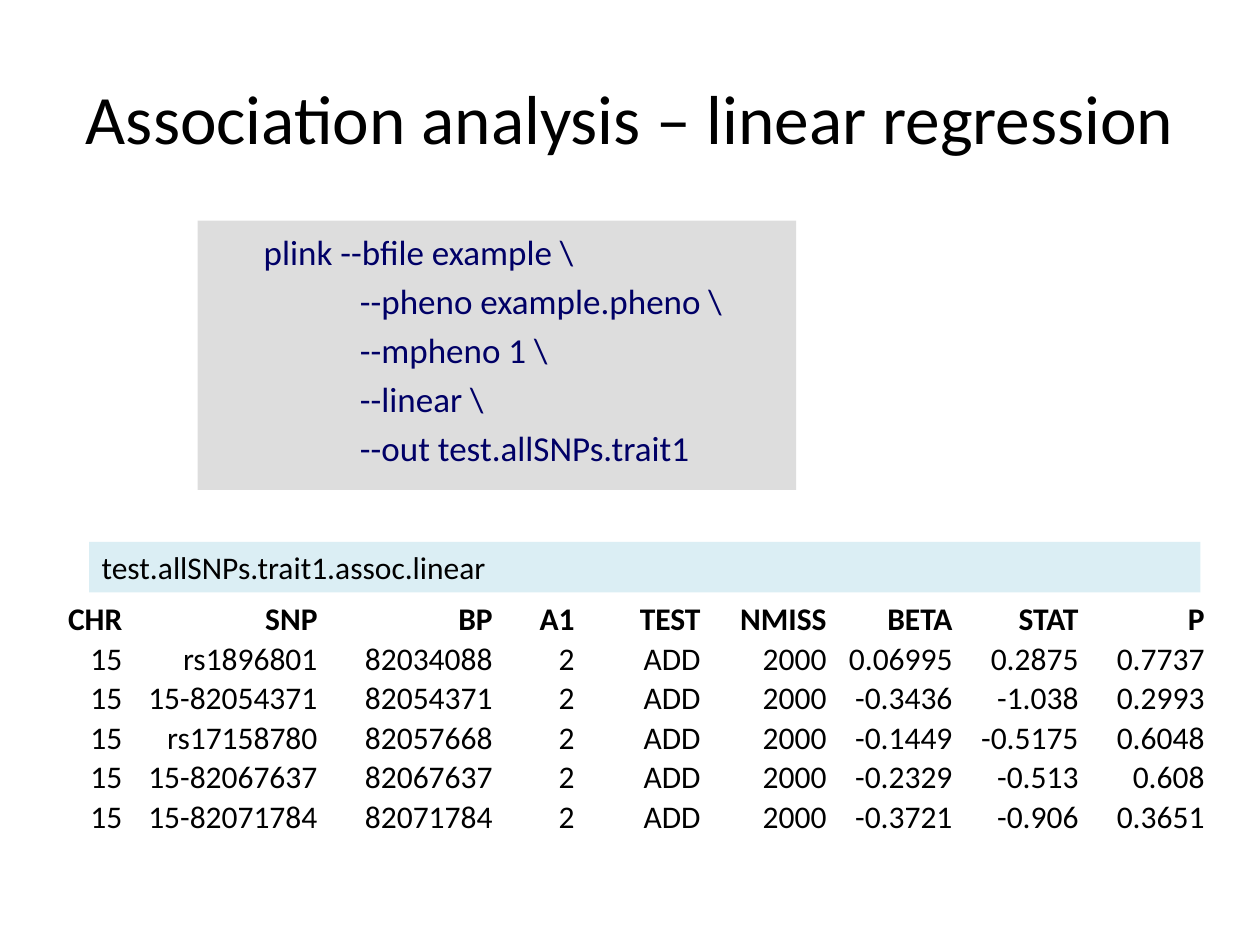
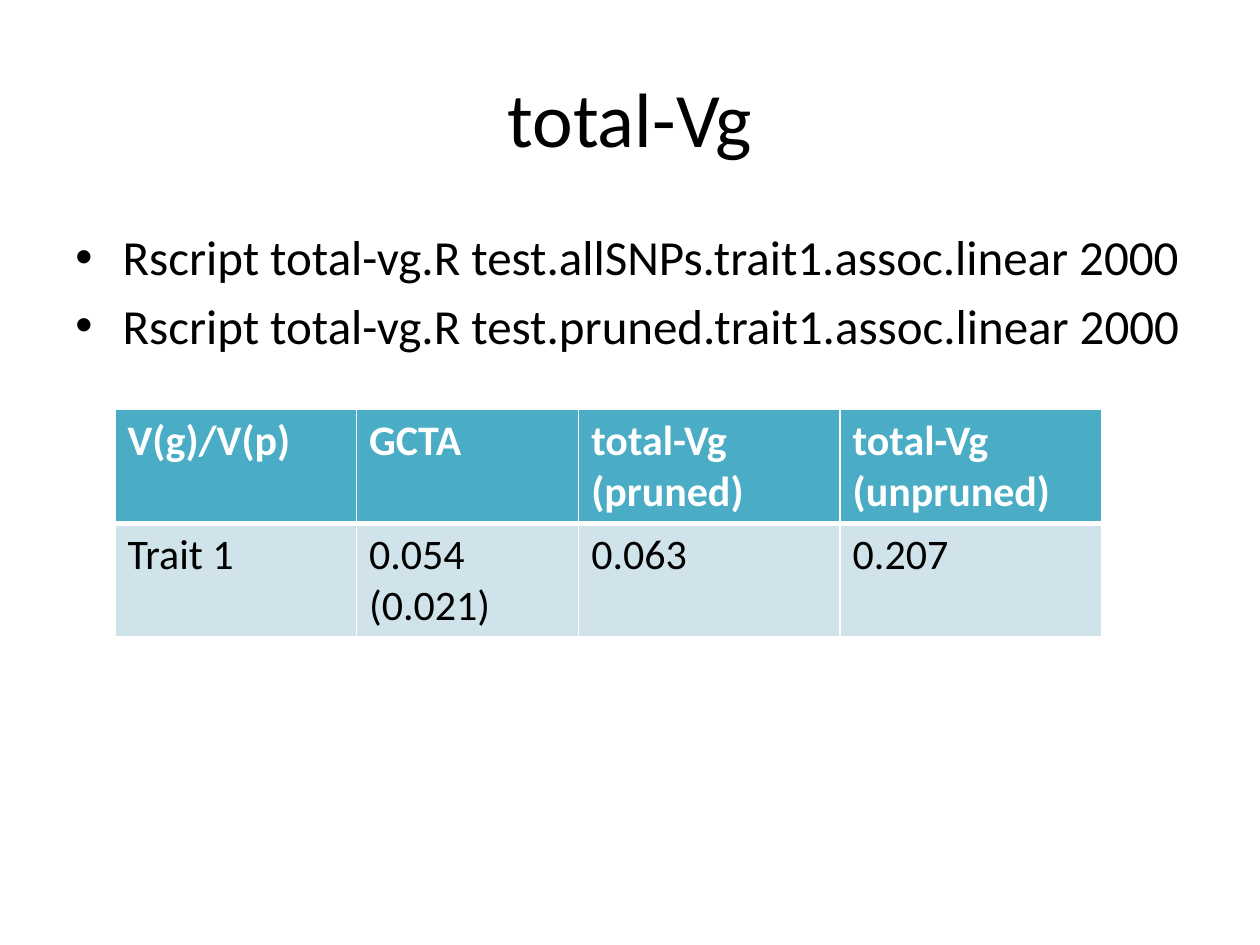
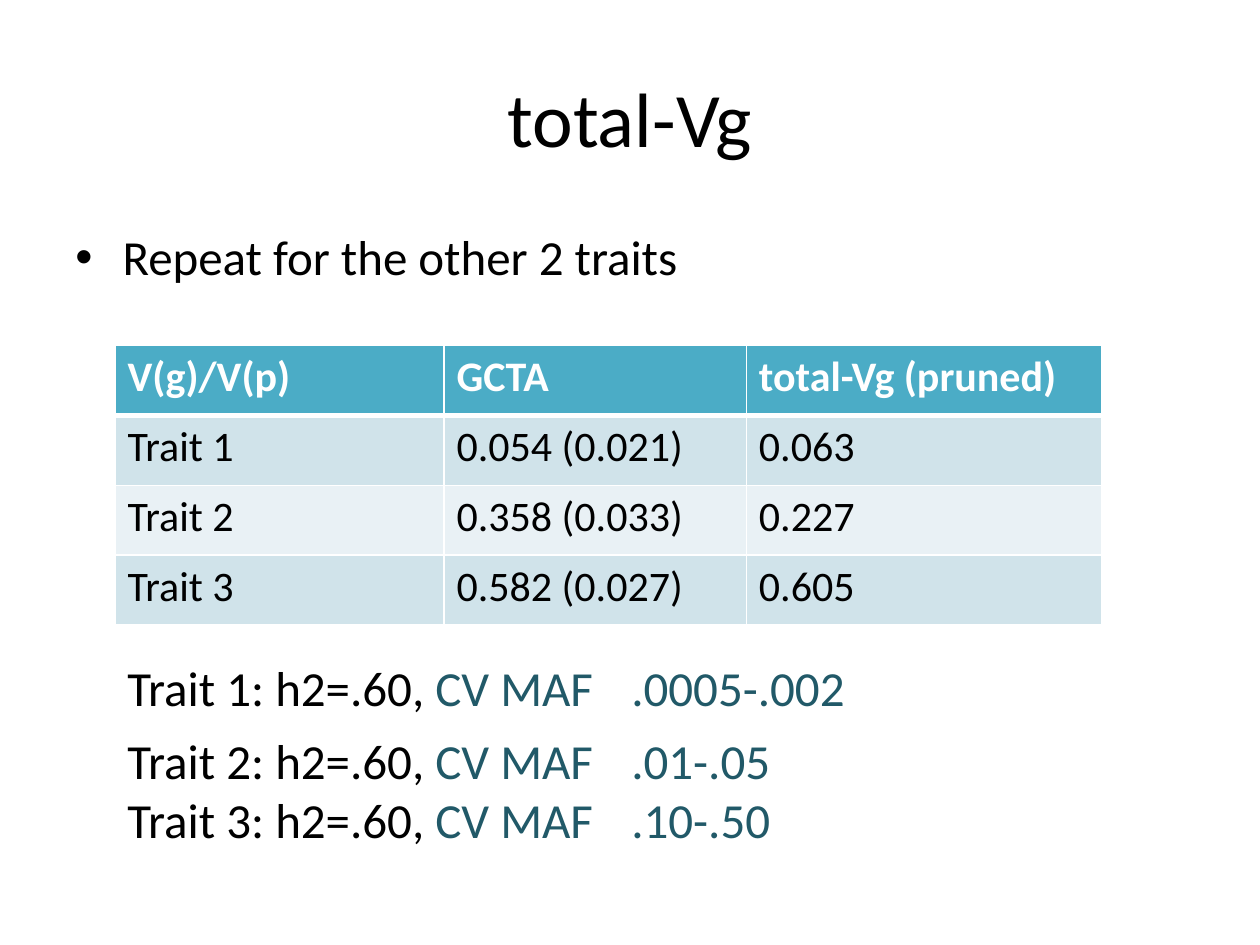
from dataclasses import dataclass

from lxml.etree import SubElement
from pptx import Presentation
from pptx.dml.color import RGBColor as Rgb
from pptx.enum.shapes import MSO_SHAPE as Preset
from pptx.enum.text import MSO_ANCHOR as Anchor, PP_ALIGN as Align
from pptx.oxml.ns import qn
from pptx.util import Pt


@dataclass(frozen=True)
class Theme:
    font: str = "Calibri"
    black: str = "000000"
    white: str = "FFFFFF"
    code: str = "000066"
    code_panel: str = "DDDDDD"
    file_band: str = "DBEEF4"
    header: str = "4BACC6"
    bands: tuple = ("D0E3EA", "E9F1F5")
    accent: str = "215968"
    title_size: float = 44
    long_title_size: float = 39.6
    body_size: float = 28
    table_size: float = 24
    code_size: float = 20
    result_size: float = 18


THEME = Theme()

# Content: association analysis
ASSOCIATION_TITLE = "Association analysis – linear regression"
COMMAND = [
    "plink --bfile example \\",
    "--pheno example.pheno \\",
    "--mpheno 1 \\",
    "--linear \\",
    "--out test.allSNPs.trait1",
]
RESULT_FILE = "test.allSNPs.trait1.assoc.linear"
RESULT_HEADER = ["CHR", "SNP", "BP", "A1", "TEST", "NMISS", "BETA", "STAT", "P"]
RESULT_WIDTHS = [34.56, 111.6, 100.08, 46.8] + [72] * 5
CHROMOSOME, ALLELE, TEST, NMISS = "15", "2", "ADD", "2000"
SNPS = [
    ("rs1896801", "82034088", "0.06995", "0.2875", "0.7737"),
    ("15-82054371", "82054371", "-0.3436", "-1.038", "0.2993"),
    ("rs17158780", "82057668", "-0.1449", "-0.5175", "0.6048"),
    ("15-82067637", "82067637", "-0.2329", "-0.513", "0.608"),
    ("15-82071784", "82071784", "-0.3721", "-0.906", "0.3651"),
]

# Content: variance estimates
VARIANCE_SLIDES = [
    {
        "title": "total-Vg",
        "bullets": [
            "Rscript total-vg.R test.allSNPs.trait1.assoc.linear 2000",
            "Rscript total-vg.R test.pruned.trait1.assoc.linear 2000",
        ],
        "bullets_width": 664,
        "estimates": [
            ["V(g)/V(p)", "GCTA", "total-Vg (pruned)", "total-Vg (unpruned)"],
            ["Trait 1", "0.054 (0.021)", "0.063", "0.207"],
        ],
        "widths": [138, 127, 149.4, 149.4],
        "top": 234,
        "row_height": 65,
        "traits": [],
    },
    {
        "title": "total-Vg",
        "bullets": ["Repeat for the other 2 traits"],
        "bullets_width": 648,
        "estimates": [
            ["V(g)/V(p)", "GCTA", "total-Vg (pruned)"],
            ["Trait 1", "0.054 (0.021)", "0.063"],
            ["Trait 2", "0.358 (0.033)", "0.227"],
            ["Trait 3", "0.582 (0.027)", "0.605"],
        ],
        "widths": [188, 172.8, 203],
        "top": 197.3,
        "row_height": 40,
        # One inner list per paragraph, one pair per line
        "traits": [
            [("Trait 1: h2=.60, ", "CV MAF\t.0005-.002")],
            [("Trait 2: h2=.60, ", "CV MAF\t.01-.05"),
             ("Trait 3: h2=.60, ", "CV MAF\t.10-.50")],
        ],
    },
]


# Shared helpers
def points(*lengths):
    return [Pt(length) for length in lengths]


def set_font(font, size, color=THEME.black, bold=False):
    font.name, font.size, font.bold = THEME.font, Pt(size), bold
    font.color.rgb = Rgb.from_string(color)


def add_titled_slide(deck, title, size=THEME.title_size):
    slide = deck.slides.add_slide(deck.slide_layouts[5])
    heading = slide.shapes.title
    heading.left, heading.top, heading.width, heading.height = points(36, 21.6, 648, 90)
    heading.text_frame.text = title
    heading.text_frame.vertical_anchor = Anchor.MIDDLE
    paragraph = heading.text_frame.paragraphs[0]
    paragraph.alignment = Align.CENTER
    set_font(paragraph.font, size)
    return slide


def add_panel(slide, color, *place):
    panel = slide.shapes.add_shape(Preset.RECTANGLE, *points(*place))
    panel.shadow.inherit = False
    panel.fill.solid()
    panel.fill.fore_color.rgb = Rgb.from_string(color)
    panel.line.fill.background()
    return panel


def add_paragraphs(slide, place, count):
    frame = slide.shapes.add_textbox(*points(*place)).text_frame
    frame.word_wrap = True
    for _ in range(count - 1):
        frame.add_paragraph()
    return frame.paragraphs


def set_indent(paragraph, left, first=0, bullet=None):
    properties = paragraph._p.get_or_add_pPr()
    properties.set("marL", str(Pt(left)))
    properties.set("indent", str(Pt(first)))
    if bullet:
        SubElement(properties, qn("a:buFont"), typeface="Arial")
        SubElement(properties, qn("a:buChar"), char=bullet)


def set_borders(cell, **weights):
    properties = cell._tc.get_or_add_tcPr()
    for position, side in enumerate("LRTB"):
        line = SubElement(properties, qn(f"a:ln{side}"), w=str(Pt(weights.get(side, 1))))
        fill = SubElement(line, qn("a:solidFill"))
        SubElement(fill, qn("a:srgbClr"), val=THEME.white)
        properties.insert(position, line)


def add_grid(slide, rows, widths, left, top, row_height, size, style_cell):
    grid = slide.shapes.add_table(
        len(rows), len(widths),
        *points(left, top, sum(widths), row_height * len(rows))).table
    grid.horz_banding = False
    for column, width in zip(grid.columns, widths):
        column.width = Pt(width)
    for r, row in enumerate(rows):
        grid.rows[r].height = Pt(row_height)
        for c, value in enumerate(row):
            cell = grid.cell(r, c)
            cell.text = value
            color = style_cell(cell, r)
            set_font(cell.text_frame.paragraphs[0].font, size, color, bold=r == 0)


def style_result(cell, row):
    cell.fill.background()
    cell.vertical_anchor = Anchor.BOTTOM
    cell.margin_left = cell.margin_right = cell.margin_top = Pt(0.72)
    cell.margin_bottom = 0
    cell.text_frame.paragraphs[0].alignment = Align.RIGHT
    return THEME.black


def style_estimate(cell, row):
    cell.fill.solid()
    fill = THEME.bands[(row - 1) % 2] if row else THEME.header
    cell.fill.fore_color.rgb = Rgb.from_string(fill)
    set_borders(cell, T=3 if row == 1 else 1, B=1 if row else 3)
    return THEME.black if row else THEME.white


# Slides
def add_association_slide(deck):
    slide = add_titled_slide(deck, ASSOCIATION_TITLE, THEME.long_title_size)

    # Command
    add_panel(slide, THEME.code_panel, 113, 126, 342, 154)
    lines = add_paragraphs(slide, (116.6, 128.2, 450, 152), len(COMMAND))
    for number, (paragraph, text) in enumerate(zip(lines, COMMAND)):
        paragraph.text = text
        paragraph.space_before = Pt(0.2 * THEME.code_size)
        set_indent(paragraph, 82 if number else 27)
        set_font(paragraph.font, THEME.code_size, THEME.code)

    # Result rows
    rows = [RESULT_HEADER] + [
        [CHROMOSOME, snp, position, ALLELE, TEST, NMISS, *statistics]
        for snp, position, *statistics in SNPS]
    add_grid(slide, rows, RESULT_WIDTHS, 36, 342.7, 22.56,
             THEME.result_size, style_result)

    # Result file name
    band = add_panel(slide, THEME.file_band, 51, 309.6, 635, 29)
    band.text_frame.text = RESULT_FILE
    band.text_frame.vertical_anchor = Anchor.TOP
    paragraph = band.text_frame.paragraphs[0]
    paragraph.alignment = Align.LEFT
    set_font(paragraph.font, THEME.result_size)


def add_variance_slide(deck, content):
    slide = add_titled_slide(deck, content["title"])

    # Bullets
    bullets = content["bullets"]
    place = (36, 126, content["bullets_width"], 356)
    for paragraph, text in zip(add_paragraphs(slide, place, len(bullets)), bullets):
        paragraph.text = text
        paragraph.space_before = Pt(0.2 * THEME.body_size)
        set_indent(paragraph, 27, -27, "•")
        set_font(paragraph.font, THEME.body_size)

    # Estimates
    add_grid(slide, content["estimates"], content["widths"], 65.7, content["top"],
             content["row_height"], THEME.table_size, style_estimate)

    # Trait settings
    traits = content["traits"]
    if traits:
        paragraphs = add_paragraphs(slide, (65.7, 372.2, 593, 117), len(traits))
        for paragraph, lines in zip(paragraphs, traits):
            paragraph.space_before = Pt(8)
            for number, line in enumerate(lines):
                if number:
                    paragraph.add_line_break()
                for text, color in zip(line, (THEME.black, THEME.accent)):
                    run = paragraph.add_run()
                    run.text = text
                    set_font(run.font, THEME.body_size, color)


def main():
    deck = Presentation()
    deck.slide_width, deck.slide_height = points(720, 540)
    add_association_slide(deck)
    for content in VARIANCE_SLIDES:
        add_variance_slide(deck, content)
    deck.save("out.pptx")


if __name__ == "__main__":
    main()
